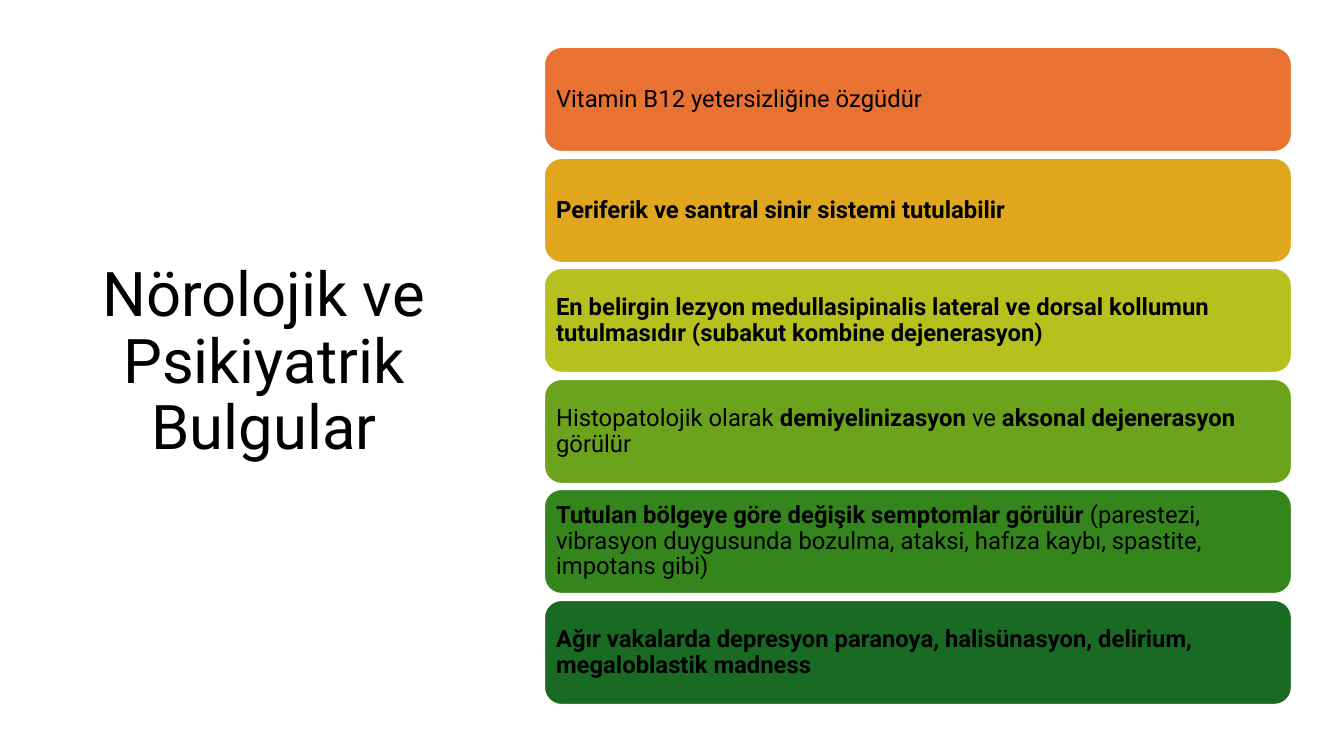
from pptx import Presentation
from pptx.dml.color import RGBColor
from pptx.enum.shapes import MSO_SHAPE
from pptx.enum.text import MSO_ANCHOR, MSO_AUTO_SIZE, PP_ALIGN
from pptx.util import Emu, Pt

PX_PER_INCH = 100.8


def px(length):
    return Emu(round(length * 914400 / PX_PER_INCH))


def color(hex_string):
    return RGBColor.from_string(hex_string)


class SlideBuilder:
    font = "Roboto"
    ink = "000000"
    outline = "FFFFFF"
    line_spacing = 0.9

    def __init__(self, page):
        self.page = page

    def format_span(self, span, size, bold=False):
        span.font.name = self.font
        span.font.size = Pt(size)
        span.font.bold = bold
        span.font.color.rgb = color(self.ink)

    def title(self, text, left, top, width, height):
        box = self.page.shapes.title
        box.left, box.top, box.width, box.height = map(px, (left, top, width, height))
        frame = box.text_frame
        frame.text = text
        frame.word_wrap = True
        frame.auto_size = MSO_AUTO_SIZE.NONE
        frame.vertical_anchor = MSO_ANCHOR.MIDDLE
        para = frame.paragraphs[0]
        para.alignment = PP_ALIGN.CENTER
        para.line_spacing = self.line_spacing
        self.format_span(para.runs[0], 44)

    def card(self, spans, fill, left, top, width, height):
        box = self.page.shapes.add_shape(
            MSO_SHAPE.ROUNDED_RECTANGLE, *map(px, (left, top, width, height)))
        box.shadow.inherit = False
        box.fill.solid()
        box.fill.fore_color.rgb = color(fill)
        box.line.color.rgb = color(self.outline)
        box.line.width = Pt(1.5)
        frame = box.text_frame
        frame.word_wrap = True
        frame.vertical_anchor = MSO_ANCHOR.MIDDLE
        frame.margin_left = frame.margin_right = px(7)
        frame.margin_top = frame.margin_bottom = px(7)
        para = frame.paragraphs[0]
        para.alignment = PP_ALIGN.LEFT
        para.line_spacing = self.line_spacing
        for text, bold in spans:
            span = para.add_run()
            span.text = text
            self.format_span(span, 17, bold)


# Each finding: card fill, then its text spans with their bold flag
FINDINGS = [
    ("E97132", [("Vitamin B12 yetersizliğine özgüdür", False)]),
    ("E0A61D", [("Periferik ve santral sinir sistemi tutulabilir", True)]),
    ("B7C11E", [("En belirgin lezyon medullasipinalis lateral ve dorsal kollumun "
                 "tutulmasıdır (subakut kombine dejenerasyon)", True)]),
    ("6BA31D", [("Histopatolojik olarak ", False), ("demiyelinizasyon", True),
                (" ve ", False), ("aksonal dejenerasyon ", True), ("görülür", False)]),
    ("34861C", [("Tutulan bölgeye göre değişik semptomlar görülür", True),
                (" (parestezi, vibrasyon duygusunda bozulma, ataksi, hafıza kaybı, "
                 "spastite, impotans gibi)", False)]),
    ("196B24", [("Ağır vakalarda depresyon paranoya, halisünasyon, delirium, "
                 "megaloblastik madness", True)]),
]
FIRST_TOP, LAST_TOP = 47, 600


def main():
    deck = Presentation()
    deck.slide_width, deck.slide_height = px(1344), px(756)
    page = deck.slides.add_slide(deck.slide_layouts[5])
    builder = SlideBuilder(page)

    # Title on the left
    builder.title("Nörolojik ve Psikiyatrik Bulgular", 41, 99, 446, 529)

    # Evenly spaced cards on the right
    for row, (fill, spans) in enumerate(FINDINGS):
        top = FIRST_TOP + round(row * (LAST_TOP - FIRST_TOP) / (len(FINDINGS) - 1))
        builder.card(spans, fill, 544, top, 748, 105)

    deck.save("out.pptx")


if __name__ == "__main__":
    main()
